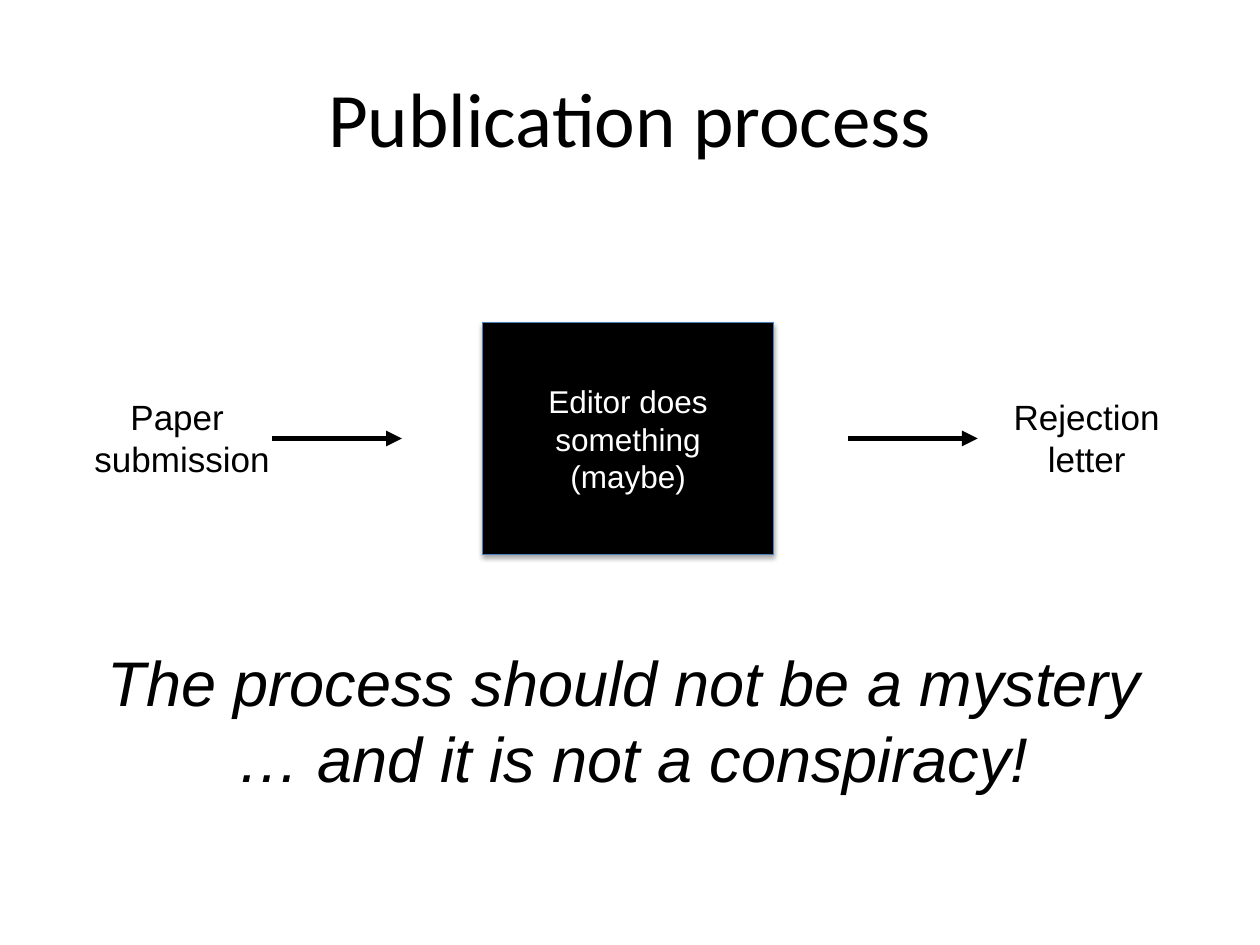
from lxml import etree
from pptx import Presentation
from pptx.dml.color import RGBColor
from pptx.enum.shapes import MSO_CONNECTOR, MSO_SHAPE
from pptx.enum.text import MSO_ANCHOR, MSO_AUTO_SIZE, PP_ALIGN
from pptx.oxml import parse_xml
from pptx.oxml.ns import qn
from pptx.util import Inches, Pt

RECT = MSO_SHAPE.RECTANGLE
LINE = MSO_CONNECTOR.STRAIGHT
MID, TOP = MSO_ANCHOR.MIDDLE, MSO_ANCHOR.TOP
GROW, FIXED = MSO_AUTO_SIZE.SHAPE_TO_FIT_TEXT, MSO_AUTO_SIZE.NONE
CENTER = PP_ALIGN.CENTER
SHADE = (
    '<a:effectLst xmlns:a="http://schemas.openxmlformats.org/drawingml/2006/main">'
    '<a:outerShdw blurRad="39370" dist="22860" dir="5400000" rotWithShape="0">'
    '<a:srgbClr val="000000"><a:alpha val="35000"/></a:srgbClr>'
    '</a:outerShdw></a:effectLst>'
)


def color(code):
    return RGBColor.from_string(code)


def write(shape, lines, frame, style, ink="000000"):
    text = shape.text_frame
    for key, value in frame.items():
        setattr(text, key, value)
    for i, line in enumerate(lines):
        para = text.paragraphs[0] if i == 0 else text.add_paragraph()
        para.text = line
        para.alignment = CENTER
        for run in para.runs:
            for key, value in style.items():
                setattr(run.font, key, value)
            run.font.color.rgb = color(ink)


prs = Presentation()
prs.slide_width, prs.slide_height = Inches(10), Inches(7.5)
slide = prs.slides.add_slide(prs.slide_layouts[6])
shapes = slide.shapes

mid = {"vertical_anchor": MID, "word_wrap": True, "auto_size": FIXED}
free = {"vertical_anchor": TOP, "word_wrap": False, "auto_size": GROW}

title = shapes.add_textbox(Inches(0.5), Inches(0.3), Inches(9), Inches(1.25))
write(title, ["Publication process"], mid, {"name": "Calibri", "size": Pt(44)})

for left in (2.16, 6.73):
    arrow = shapes.add_connector(
        LINE, Inches(left), Inches(3.48), Inches(left + 1.03), Inches(3.48))
    arrow.line.color.rgb = color("000000")
    arrow.line.width = Pt(3)
    etree.SubElement(arrow.line._get_or_add_ln(), qn("a:tailEnd"), type="triangle")
    etree.SubElement(arrow._element.spPr, qn("a:effectLst"))

for left, label in ((0.5, "Paper \vsubmission"), (7.68, "Rejection\vletter")):
    box = shapes.add_textbox(Inches(left), Inches(2.88), Inches(1.89), Inches(1.18))
    write(box, [label], mid, {"name": "Arial", "size": Pt(20)})

editor = shapes.add_shape(RECT, Inches(3.83), Inches(2.56), Inches(2.31), Inches(1.84))
editor.fill.solid()
editor.fill.fore_color.rgb = color("000000")
editor.line.color.rgb = color("4B7EBC")
editor.line.width = Pt(0.75)
editor._element.spPr.append(parse_xml(SHADE))
write(editor, ["Editor does something (maybe)"], mid,
      {"name": "Arial", "size": Pt(18)}, "FFFFFF")

moral = shapes.add_textbox(Inches(0.67), Inches(5.06), Inches(8.71), Inches(1.31))
write(moral, ["The process should not be a mystery ", "… and it is not a conspiracy!"],
      free, {"name": "Arial", "size": Pt(36), "italic": True})

prs.save("out.pptx")
